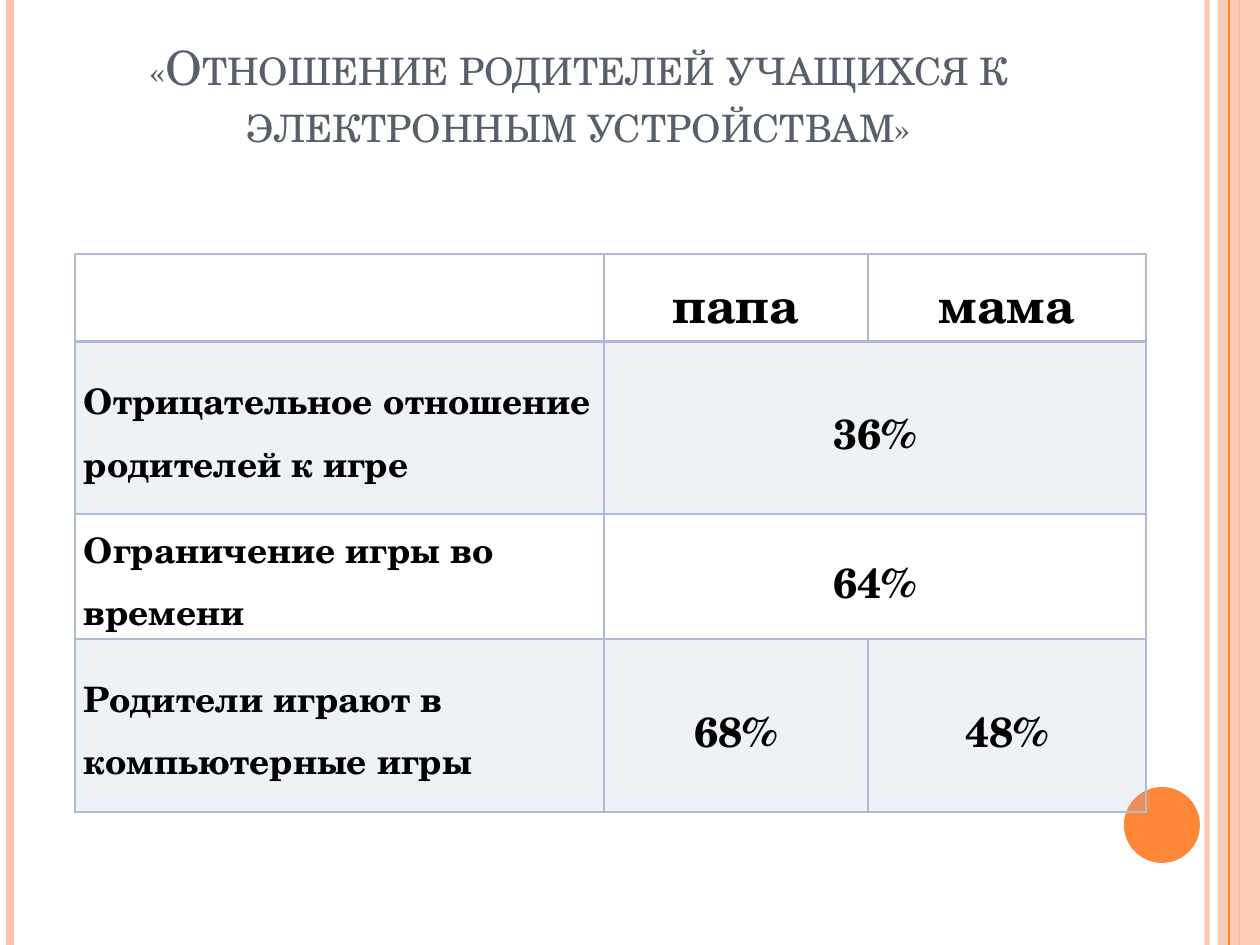
from lxml import etree
from pptx import Presentation
from pptx.dml.color import RGBColor as RGB
from pptx.enum.shapes import MSO_CONNECTOR as LINE, MSO_SHAPE as SHAPE
from pptx.enum.text import MSO_ANCHOR as ANCHOR, PP_ALIGN as ALIGN
from pptx.oxml.ns import qn
from pptx.util import Pt

PX = 914400 // 126
PEACH, ORANGE, BLUE = "FEC3AE", "FE8637", "AEBAD5"


def paint(fill, color, alpha=100):
    fill.solid()
    fill.fore_color.rgb = RGB.from_string(color)
    if alpha < 100:
        node = fill._xPr.find(qn("a:solidFill") + "/" + qn("a:srgbClr"))
        etree.SubElement(node, qn("a:alpha"), val=str(alpha * 1000))


def write(frame, text, size, color="000000", bold=False, align=ALIGN.CENTER, space=None, caps=False):
    par = frame.paragraphs[0]
    par.alignment = align
    par.line_spacing = space
    run = par.add_run()
    run.text = text
    font = run.font
    font.name, font.size, font.bold = "TeX Gyre Schola", Pt(size), bold
    paint(font.fill, color)
    if caps:
        run._r.get_or_add_rPr().set("cap", "small")


deck = Presentation()
deck.slide_width, deck.slide_height = 1260 * PX, 945 * PX
slide = deck.slides.add_slide(deck.slide_layouts[6])
shapes = slide.shapes

# Side stripes, the band and the disc, from back to front
for kind, x, y, w, h, color, width, alpha in [
    ("line", 1207, 0, 0, 945, PEACH, 3, 93),
    ("line", 10, 0, 0, 945, PEACH, 4.5, 100),
    ("line", 1239, 0, 0, 945, ORANGE, 1.5, 100),
    (SHAPE.RECTANGLE, 1218, 0, 42, 945, PEACH, 0, 87),
    ("line", 1229, 0, 0, 945, ORANGE, 0.75, 100),
    (SHAPE.OVAL, 1124, 787, 76, 76, ORANGE, 0, 100),
]:
    if kind == "line":
        rail = shapes.add_connector(LINE.STRAIGHT, x * PX, y * PX, (x + w) * PX, (y + h) * PX)
        rail.line.width = Pt(width)
        paint(rail.line.fill, color, alpha)
        etree.SubElement(rail._element.spPr, qn("a:effectLst"))
    else:
        part = shapes.add_shape(kind, x * PX, y * PX, w * PX, h * PX)
        part.shadow.inherit = False
        part.line.fill.background()
        paint(part.fill, color, alpha)

# Title
frame = shapes.add_textbox(64 * PX, 116 * PX, 1030 * PX, 99 * PX).text_frame
frame.word_wrap = True
frame.vertical_anchor = ANCHOR.BOTTOM
frame.margin_bottom = 63 * PX
write(frame, "«Отношение родителей учащихся к электронным устройствам»", 27, "575F6D", caps=True)

# Table: None marks the part of a merged cell that is covered
rows = [
    ["", "папа", "мама"],
    ["Отрицательное отношение родителей к игре", "36%", None],
    ["Ограничение игры во времени", "64%", None],
    ["Родители играют в компьютерные игры", "68%", "48%"],
]
cols, highs = [529, 264, 278], [88, 172, 125, 173]
table = shapes.add_table(4, 3, 75 * PX, 254 * PX, sum(cols) * PX, sum(highs) * PX).table
table.first_row = table.horz_banding = False
for col, w in zip(table.columns, cols):
    col.width = w * PX
for row, h in zip(table.rows, highs):
    row.height = h * PX

for r, row in enumerate(rows):
    for c, text in enumerate(row):
        cell = table.cell(r, c)
        props = cell._tc.get_or_add_tcPr()
        for side in "LRTB":
            thick = (r, side) in [(0, "B"), (1, "T")]
            edge = etree.SubElement(props, qn("a:ln" + side), w=str(Pt(2 if thick else 1)))
            fill = etree.SubElement(edge, qn("a:solidFill"))
            etree.SubElement(fill, qn("a:srgbClr"), val=BLUE)
        if r % 2:
            paint(cell.fill, BLUE, 20)
        else:
            cell.fill.background()
        cell.vertical_anchor = ANCHOR.MIDDLE
        cell.margin_left = cell.margin_right = 9 * PX
        cell.margin_top = cell.margin_bottom = 0
        if text:
            size = 28 if r == 0 else 24 if c else 20
            write(cell.text_frame, text, size, bold=True, space=1.15,
                  align=ALIGN.CENTER if c else ALIGN.LEFT)
    if None in row:
        table.cell(r, 1).merge(table.cell(r, 2))

deck.save("out.pptx")
